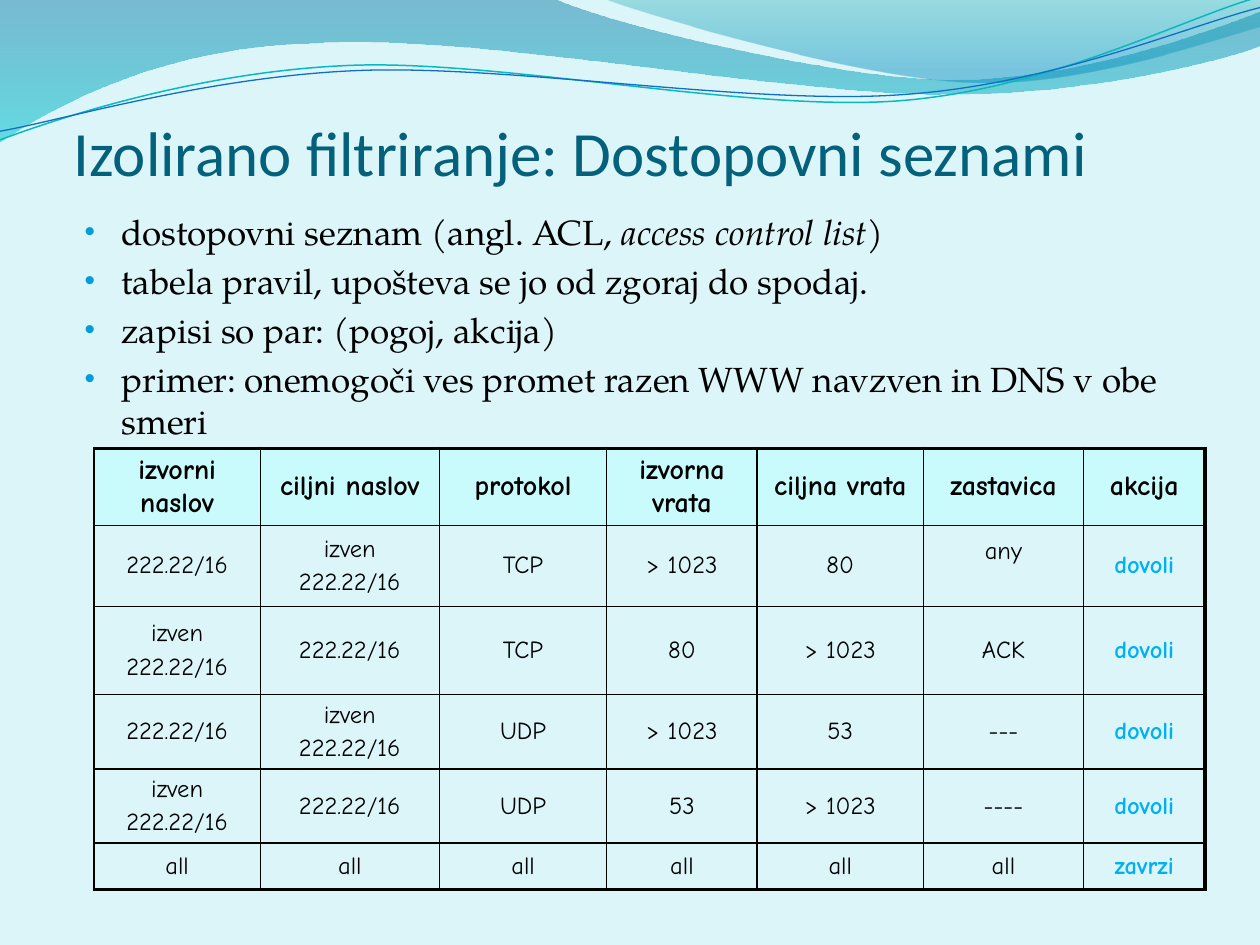
from lxml import etree
from pptx import Presentation
from pptx.dml.color import RGBColor
from pptx.enum.text import MSO_ANCHOR, PP_ALIGN
from pptx.oxml import parse_xml
from pptx.oxml.ns import nsdecls, qn
from pptx.util import Pt


def color(value):
    return RGBColor.from_string(value)


def add_wave(start, segments, closed):
    """Draw segments of one point (straight) or three points (cubic curve)."""
    points = [(Pt(x), Pt(y)) for segment in segments for x, y in segment]
    builder = slide.shapes.build_freeform(Pt(start[0]), Pt(start[1]), scale=1.0)
    builder.add_line_segments(points, close=closed)
    wave = builder.convert_to_shape()
    wave.shadow.inherit = False
    # Gather each group of three points into one cubic curve
    steps = iter(list(wave._element.iter(qn("a:lnTo"))))
    for segment in segments:
        group = [next(steps) for _ in segment]
        if len(group) == 3:
            curve = etree.Element(qn("a:cubicBezTo"))
            group[0].addprevious(curve)
            for step in group:
                curve.append(step[0])
                step.getparent().remove(step)
    return wave


prs = Presentation()
prs.slide_width, prs.slide_height = Pt(720), Pt(540)
slide = prs.slides.add_slide(prs.slide_layouts[6])
slide.background.fill.solid()
slide.background.fill.fore_color.rgb = color("DBF5F9")

# Translucent waves along the top: start, segments, (colour, opacity in %) from top down
bands = [
    ((0, 0), [
        [(316.8, -0.7)],
        [(342.7, 12.2), (478.1, 45.4), (545.8, 45.4)],
        [(614.2, 45.4), (689.8, 18.7), (720, 6.5)],
        [(720.7, 25.9)],
        [(707.8, 31.7), (626.4, 54.7), (537.1, 54)],
        [(446.4, 54), (275, 20.2), (185, 24.5)],
        [(92.9, 25.9), (33.1, 59.8), (-0.7, 81.4)],
        [(0, 0)],
    ], [("0074A1", 45), ("00C6CF", 55)], 1),
    ((344.9, -0.7), [
        [(366.5, 7.9), (491, 44.6), (553.7, 46.8)],
        [(616.3, 49.7), (691.9, 23), (720, 15.1)],
        [(720, 0)],
        [(344.9, -0.7)],
    ], [("00A1A9", 30), ("008BBF", 45)], 0.8),
]
for start, segments, tints, end_position in bands:
    band = add_wave(start, segments, True)
    band.line.fill.background()
    band.fill.gradient()
    band.fill.gradient_angle = 270
    stops = band.fill.gradient_stops
    for stop, (tint, _), position in zip(stops, tints, (0, end_position)):
        stop.color.rgb = color(tint)
        stop.position = position
    for clr, (_, opacity) in zip(band._element.spPr.iter(qn("a:srgbClr")), tints):
        etree.SubElement(clr, qn("a:alpha")).set("val", str(opacity * 1000))

# Thin wave lines, slightly turned
wave_lines = [
    ((-1.4, 63), [
        [(33.8, 51.7), (114.1, 29.4), (199.8, 29.9)],
        [(284.8, 30.3), (425.8, 67.3), (512.4, 64.9)],
        [(599, 62.4), (676.4, 25.7), (720.2, 15.5)],
    ], "0AB8BF", 0.85),
    ((-1.1, 58), [
        [(32.9, 53.8), (118.3, 32.5), (204.1, 33)],
        [(290.6, 33.4), (429, 63.8), (515.5, 61.4)],
        [(601.4, 59.6), (678.4, 30.1), (721.4, 21.3)],
    ], "0F6FC6", 0.75),
]
for start, segments, tint, width in wave_lines:
    wave_line = add_wave(start, segments, False)
    wave_line.rotation = 357.3
    wave_line.fill.background()
    wave_line.line.color.rgb = color(tint)
    wave_line.line.width = Pt(width)

# Table of filtering rules
inside, outside = "222.22/16", "izven\n222.22/16"
rules = [
    ["izvorni naslov", "ciljni naslov", "protokol", "izvorna vrata", "ciljna vrata",
     "zastavica", "akcija"],
    [inside, outside, "TCP", "> 1023", "80", "any", "dovoli"],
    [outside, inside, "TCP", "80", "> 1023", "ACK", "dovoli"],
    [inside, outside, "UDP", "> 1023", "53", "---", "dovoli"],
    [outside, inside, "UDP", "53", "> 1023", "----", "dovoli"],
    ["all"] * 6 + ["zavrzi"],
]
column_widths = [95, 102.4, 95.6, 86, 95, 91.5, 69.5]
row_heights = [44, 46.4, 50.4, 42.2, 42.2, 26.6]
acl = slide.shapes.add_table(len(rules), len(column_widths), Pt(53.75), Pt(256.2),
                             Pt(sum(column_widths)), Pt(sum(row_heights))).table
acl.first_row = acl.horz_banding = False
for column, width in zip(acl.columns, column_widths):
    column.width = Pt(width)
for row, height in zip(acl.rows, row_heights):
    row.height = Pt(height)

last_row, last_column = len(rules) - 1, len(column_widths) - 1
for r, rule in enumerate(rules):
    for c, entry in enumerate(rule):
        cell = acl.cell(r, c)
        header, action = r == 0, r > 0 and c == last_column
        cell.vertical_anchor = MSO_ANCHOR.MIDDLE
        if header:
            cell.fill.solid()
            cell.fill.fore_color.rgb = color("C9FAFC")
        else:
            cell.fill.background()
        if entry == "any":  # sits a little above the middle
            cell.margin_bottom = Pt(20)
        for i, words in enumerate(entry.split("\n")):
            frame = cell.text_frame
            paragraph = frame.add_paragraph() if i else frame.paragraphs[0]
            paragraph.alignment = PP_ALIGN.CENTER
            paragraph.space_before = Pt(3)
            run = paragraph.add_run()
            run.text = words
            run.font.name = "Comic Neue"
            run.font.size = Pt(16 if header else 14)
            run.font.bold = header or action
            run.font.color.rgb = color("00B0F0" if action else "000000")
        # Thick rule at the top, right and bottom of the table
        thick = {"L": False, "R": c == last_column, "T": header, "B": r == last_row}
        for i, (side, is_thick) in enumerate(thick.items()):
            cell._tc.get_or_add_tcPr().insert(i, parse_xml(
                f'<a:ln{side} {nsdecls("a")} w="{Pt(2.25 if is_thick else 1)}">'
                f'<a:solidFill><a:srgbClr val="000000"/></a:solidFill></a:ln{side}>'))

# Title
title = slide.shapes.add_textbox(Pt(42), Pt(18), Pt(636), Pt(90)).text_frame
title.word_wrap = True
title.vertical_anchor = MSO_ANCHOR.BOTTOM
title.margin_left = title.margin_right = title.margin_bottom = 0
heading = title.paragraphs[0].add_run()
heading.text = "Izolirano filtriranje: Dostopovni seznami"
heading.font.name = "Calibri"
heading.font.size = Pt(36)
heading.font.color.rgb = color("04617B")

# Bulleted points, each a list of (words, italic)
bullets = [
    [("dostopovni seznam (angl. ACL, ", False), ("access control list", True), (")", False)],
    [("tabela pravil, upošteva se jo od zgoraj do spodaj.", False)],
    [("zapisi so par: (pogoj, akcija)", False)],
    [("primer: onemogoči ves promet razen WWW navzven in DNS v obe smeri", False)],
]
points_text = slide.shapes.add_textbox(Pt(41.25), Pt(116.5), Pt(679), Pt(80)).text_frame
points_text.word_wrap = True
for i, pieces in enumerate(bullets):
    paragraph = points_text.add_paragraph() if i else points_text.paragraphs[0]
    paragraph.space_before = Pt(4)
    properties = paragraph._p.get_or_add_pPr()
    properties.set("marL", str(Pt(21)))
    properties.set("indent", str(Pt(-21)))
    bullet_color = etree.SubElement(properties, qn("a:buClr"))
    etree.SubElement(bullet_color, qn("a:srgbClr")).set("val", "009DD9")
    etree.SubElement(properties, qn("a:buSzPct")).set("val", "85000")
    etree.SubElement(properties, qn("a:buFont")).set("typeface", "Arial")
    etree.SubElement(properties, qn("a:buChar")).set("char", "•")
    for words, italic in pieces:
        run = paragraph.add_run()
        run.text = words
        run.font.name = "TeX Gyre Pagella"
        run.font.size = Pt(20)
        run.font.italic = italic
        run.font.color.rgb = color("000000")

prs.save("out.pptx")
